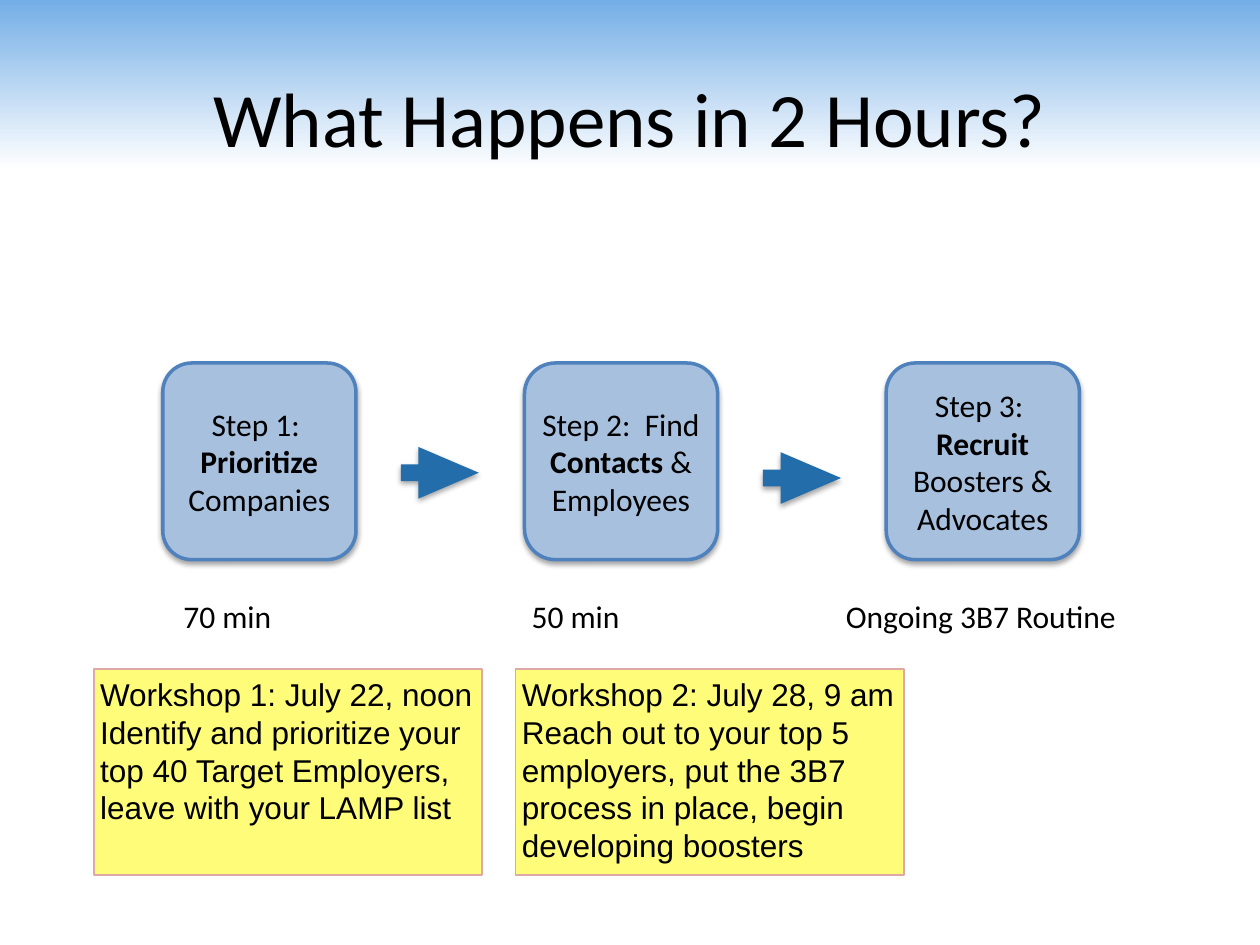
import pptx
import pptx.dml.color
import pptx.enum.shapes
import pptx.enum.text
import pptx.oxml
import pptx.oxml.ns
import pptx.util

Pt = pptx.util.Pt
KIND = pptx.enum.shapes.MSO_SHAPE
ALIGN = pptx.enum.text.PP_ALIGN
ANCHOR = pptx.enum.text.MSO_ANCHOR
SHADE = (
    '<a:effectLst %s><a:outerShdw blurRad="38100" dist="22860" dir="5400000" '
    'rotWithShape="0"><a:srgbClr val="000000"><a:alpha val="35000"/>'
    '</a:srgbClr></a:outerShdw></a:effectLst>' % pptx.oxml.ns.nsdecls("a")
)
STEPS = [
    ("Step 1:  ", "Prioritize", " Companies", 72, 0.15),
    ("Step 2:  Find ", "Contacts", " & Employees", 72, 0.16),
    ("Step 3:  ", "Recruit", " Boosters & Advocates", 95, 0.15),
]
ARROWS = [(229, 255.4), (436, 258.4)]
TIMES = [(101.2, 64, "70 min"), (300.2, 64, "50 min"),
         (479.8, 166, "Ongoing 3B7 Routine")]
NOTES = [
    ["Workshop 1: July 22, noon", "Identify and prioritize your",
     "top 40 Target Employers,", "leave with your LAMP list"],
    ["Workshop 2: July 28, 9 am", "Reach out to your top 5",
     "employers, put the 3B7", "process in place, begin",
     "developing boosters"],
]


def color(code):
    """Turn a hex string into a colour."""
    return pptx.dml.color.RGBColor.from_string(code)


def write(shape, lines, size=18, font="Calibri", align=ALIGN.LEFT,
          anchor=ANCHOR.TOP, wrap=False):
    """Fill a shape with lines, each a list of (text, bold) runs."""
    frame = shape.text_frame
    frame.word_wrap = wrap
    frame.vertical_anchor = anchor
    frame.margin_left = frame.margin_right = Pt(3.6)
    frame.margin_top = frame.margin_bottom = Pt(3.6)
    for i, line in enumerate(lines):
        para = frame.add_paragraph() if i else frame.paragraphs[0]
        para.alignment = align
        for text, bold in line:
            run = para.add_run()
            run.text = text
            run.font.size = Pt(size)
            run.font.name = font
            run.font.bold = bold
            run.font.color.rgb = color("000000")


def label(shapes, box, lines, **style):
    """Add a text box."""
    text = shapes.add_textbox(*map(Pt, box))
    write(text, lines, wrap=True, **style)


def block(shapes, kind, box, fill, line=None, width=1, shade=True):
    """Add a filled shape with an optional line and shadow."""
    shape = shapes.add_shape(kind, *map(Pt, box))
    shape.fill.solid()
    shape.fill.fore_color.rgb = color(fill)
    if line:
        shape.line.color.rgb = color(line)
        shape.line.width = Pt(width)
    else:
        shape.line.fill.background()
    shape.shadow.inherit = False
    if shade:
        props = shape._element.spPr
        props.replace(props.find(pptx.oxml.ns.qn("a:effectLst")),
                      pptx.oxml.parse_xml(SHADE))
    return shape


def backdrop(slide):
    """Fade the slide from blue at the top to white."""
    fill = slide.background.fill
    fill.gradient()
    fill.gradient_angle = 90
    for stop, (place, code) in zip(fill.gradient_stops,
                                   [(0.82, "FFFFFF"), (1, "74AEE6")]):
        stop.position = place
        stop.color.rgb = color(code)


def step(slide, box, data):
    """Draw one grouped step card."""
    lead, name, tail, tall, curve = data
    left, top, width, height = box
    group = slide.shapes.add_group_shape().shapes
    card = block(group, KIND.ROUNDED_RECTANGLE, box, "A7C0DE", "4F81BD", 2)
    card.adjustments[0] = curve
    inner = (left + 5, top + (height - tall) / 2, width - 10, tall)
    label(group, inner, [[(lead, False), (name, True), (tail, False)]],
          align=ALIGN.CENTER, anchor=ANCHOR.MIDDLE)


def arrow(slide, box):
    """Draw one arrow between steps."""
    shape = block(slide.shapes, KIND.RIGHT_ARROW, box, "226DAA")
    shape.adjustments[0] = 0.32
    shape.adjustments[1] = 1.17


def note(slide, box, lines):
    """Draw one yellow workshop note."""
    shape = block(slide.shapes, KIND.RECTANGLE, box, "FFFC79", "DFA7A6",
                  shade=False)
    write(shape, [[(line, False)] for line in lines], font="Arial")


def main():
    """Build and save the slide."""
    deck = pptx.Presentation()
    deck.slide_width, deck.slide_height = Pt(720), Pt(540)
    slide = deck.slides.add_slide(deck.slide_layouts[6])
    backdrop(slide)
    label(slide.shapes, (36, 21.6, 648, 90),
          [[("What Happens in 2 Hours?", False)]], size=44,
          align=ALIGN.CENTER, anchor=ANCHOR.MIDDLE)
    for left, width, text in TIMES:
        label(slide.shapes, (left, 337.7, width, 26), [[(text, False)]])
    for i, data in enumerate(STEPS):
        step(slide, (93 + 206.7 * i, 207.4, 110.4, 112.4), data)
    for left, top in ARROWS:
        arrow(slide, (left, top, 44.6, 29.5))
    for i, lines in enumerate(NOTES):
        note(slide, (53.6 + 241 * i, 382.2, 222, 118), lines)
    deck.save("out.pptx")


if __name__ == "__main__":
    main()
